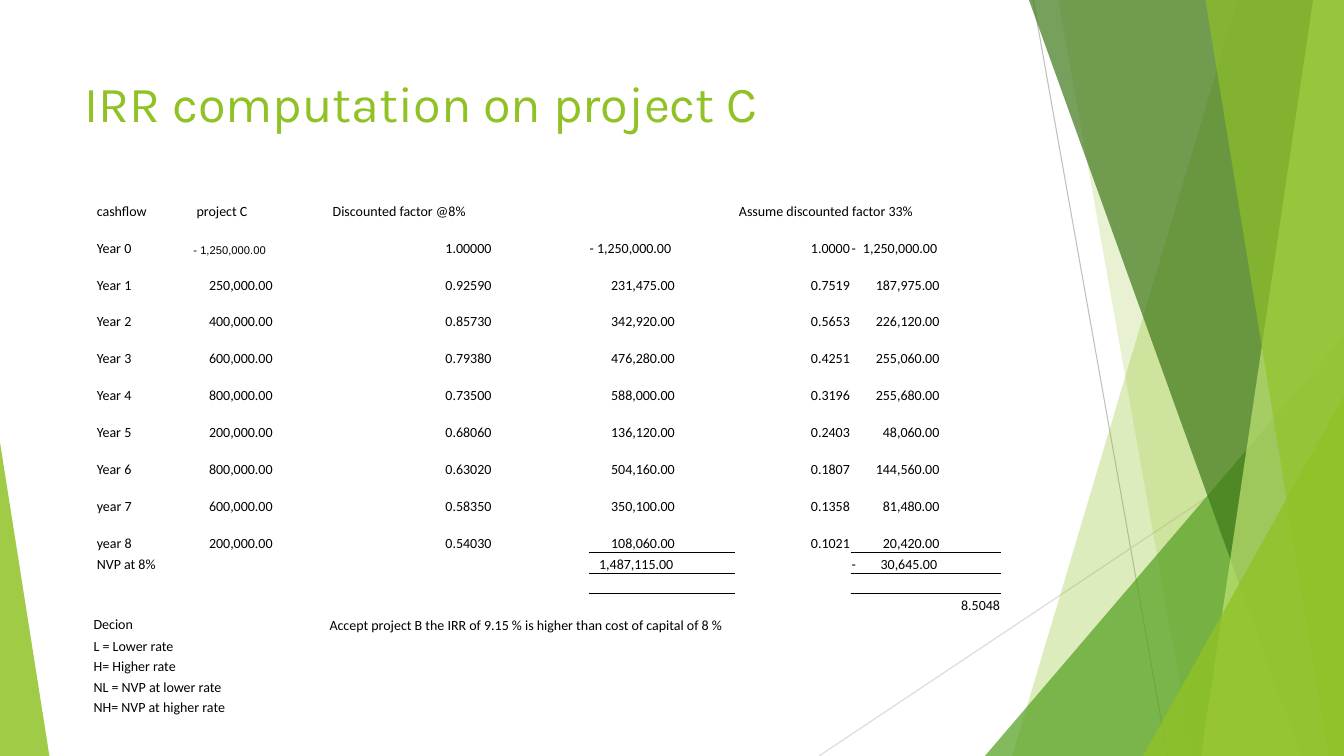
from dataclasses import dataclass

from lxml import etree
from pptx import Presentation
from pptx.dml.color import RGBColor
from pptx.enum.shapes import MSO_CONNECTOR, MSO_SHAPE
from pptx.enum.text import MSO_ANCHOR, PP_ALIGN
from pptx.oxml.ns import qn
from pptx.util import Pt

LEFT, RIGHT = PP_ALIGN.LEFT, PP_ALIGN.RIGHT
BOTTOM, MIDDLE = MSO_ANCHOR.BOTTOM, MSO_ANCHOR.MIDDLE
TRIANGLE, STRAIGHT = MSO_SHAPE.ISOSCELES_TRIANGLE, MSO_CONNECTOR.STRAIGHT
W, H = 960, 540
GREEN, BLACK = "90C226", "000000"
PLAIN_STYLE = "{2D5ABB26-0587-4C30-8999-92F81FD0307C}"
INSET, LABEL_INSET = 0.7, 3


@dataclass
class Blade:
    """Facet running from the top edge to the bottom and right edges."""
    top: float
    bottom: float
    color: str
    alpha: int


@dataclass
class Wedge:
    """Right triangle standing on the bottom edge."""
    left: float
    top: float
    width: float
    apex: float
    color: str
    alpha: int


@dataclass
class Entry:
    row: int
    col: int
    text: str
    left: float = INSET
    right: float = INSET
    align: PP_ALIGN = LEFT
    anchor: MSO_ANCHOR = BOTTOM
    size: float = 10
    font: str = "Calibri"
    tab: float = 0


FACETS = [
    Blade(884, 723, GREEN, 30),
    Blade(756, 852, GREEN, 20),
    Wedge(703.5, 240, 256.5, 1, "54A021", 72),
    Blade(735, 929.5, "3F7819", 70),
    Blade(938, 858, "C0E474", 70),
    Blade(861, 949, GREEN, 65),
    Wedge(816.5, 283, 143.5, 1, GREEN, 80),
    Wedge(0, 316, 35.3, 0, GREEN, 85),
]
RAYS = [((738, 0), (834, H), "BFBFBF"), ((W, 290), (585, H), "D9D9D9")]

COLS = [71.3, 97.2, 185.8, 104.4, 82.8, 107.3, 71.3, 71.3]
ROWS = [14.6] + [26.35] * 9 + [15.2] + [14.6] * 7
MERGES = [(0, 4, 6), (10, 0, 1), (12, 0, 2), (13, 2, 5)] + [(r, 0, 1) for r in range(14, 18)]
RIGHT_INSETS = [40, 69.5, 43, INSET, 44]  # number columns 1 to 5
YEARS = [
    ("Year 1", "250,000.00", "0.92590", "231,475.00", "0.7519", "187,975.00"),
    ("Year 2", "400,000.00", "0.85730", "342,920.00", "0.5653", "226,120.00"),
    ("Year 3", "600,000.00", "0.79380", "476,280.00", "0.4251", "255,060.00"),
    ("Year 4", "800,000.00", "0.73500", "588,000.00", "0.3196", "255,680.00"),
    ("Year 5", "200,000.00", "0.68060", "136,120.00", "0.2403", "48,060.00"),
    ("Year 6", "800,000.00", "0.63020", "504,160.00", "0.1807", "144,560.00"),
    ("year 7", "600,000.00", "0.58350", "350,100.00", "0.1358", "81,480.00"),
    ("year 8", "200,000.00", "0.54030", "108,060.00", "0.1021", "20,420.00"),
]
LABELS = [
    (0, 0, "cashflow"), (0, 1, "project C"), (0, 2, "Discounted factor @8%"),
    (0, 4, "Assume discounted factor 33%"), (1, 0, "Year 0"), (10, 0, "NVP at 8%"),
]
LEGEND = ["L = Lower rate", "H= Higher rate", "NL = NVP at lower rate", "NH= NVP at higher rate"]
# Row, side and width of the rules under the present-value columns
RULES = [(9, "B", 0.5), (10, "B", 1), (10, "T", 0.5), (11, "T", 1)]


def rgb(color: str) -> RGBColor:
    return RGBColor.from_string(color)


def paint(shape, color: str, alpha: int) -> None:
    shape.shadow.inherit = False
    shape.line.fill.background()
    shape.fill.solid()
    shape.fill.fore_color.rgb = rgb(color)
    clr = next(shape.fill._xPr.iter(qn("a:srgbClr")))
    etree.SubElement(clr, qn("a:alpha")).set("val", str(alpha * 1000))


def draw_blade(s, b: Blade) -> None:
    fb = s.shapes.build_freeform(Pt(b.top), 0)
    fb.add_line_segments([(Pt(x), Pt(y)) for x, y in ((W, 0), (W, H), (b.bottom, H))])
    paint(fb.convert_to_shape(), b.color, b.alpha)


def draw_wedge(s, w: Wedge) -> None:
    sp = s.shapes.add_shape(TRIANGLE, Pt(w.left), Pt(w.top), Pt(w.width), Pt(H - w.top))
    sp.adjustments[0] = w.apex
    paint(sp, w.color, w.alpha)


def draw_ray(s, start: tuple, end: tuple, color: str) -> None:
    c = s.shapes.add_connector(STRAIGHT, *[Pt(v) for v in start + end])
    c.line.color.rgb = rgb(color)
    c.line.width = Pt(0.75)
    etree.SubElement(c._element.spPr, qn("a:effectLst"))


def add_run(p, text: str, size: float, font: str, color: str) -> None:
    r = p.add_run()
    r.text = text
    r.font.size = Pt(size)
    r.font.name = font
    r.font.color.rgb = rgb(color)


def fill_cell(tbl, e: Entry) -> None:
    cell = tbl.cell(e.row, e.col)
    cell.margin_left, cell.margin_right = Pt(e.left), Pt(e.right)
    cell.vertical_anchor = e.anchor
    p = cell.text_frame.paragraphs[0]
    p.alignment = e.align
    if e.tab:
        tabs = etree.SubElement(p._p.get_or_add_pPr(), qn("a:tabLst"))
        etree.SubElement(tabs, qn("a:tab"), pos=str(Pt(e.tab)), algn="r")
    add_run(p, e.text, e.size, e.font, BLACK)


def draw_rule(cell, side: str, width: float) -> None:
    ln = etree.Element(qn("a:ln" + side), w=str(Pt(width)))
    fill = etree.SubElement(ln, qn("a:solidFill"))
    etree.SubElement(fill, qn("a:srgbClr"), val=BLACK)
    cell._tc.get_or_add_tcPr().insert(0, ln)


def table_entries() -> list[Entry]:
    entries = [Entry(r, c, text, left=LABEL_INSET) for r, c, text in LABELS]
    for row, (year, *numbers) in enumerate(YEARS, 2):
        entries.append(Entry(row, 0, year, left=LABEL_INSET))
        for col, (text, inset) in enumerate(zip(numbers, RIGHT_INSETS), 1):
            entries.append(Entry(row, col, text, right=inset, align=RIGHT))
    entries += [
        Entry(1, 1, "- 1,250,000.00", size=8, font="Arial"),
        Entry(1, 2, "1.00000", right=RIGHT_INSETS[1], align=RIGHT),
        Entry(1, 3, "- 1,250,000.00"),
        Entry(1, 4, "1.0000", align=RIGHT),
        Entry(1, 5, "-\t1,250,000.00", tab=61),
        Entry(10, 3, "1,487,115.00", right=44, align=RIGHT),
        Entry(10, 5, "-\t30,645.00", tab=61),
        Entry(12, 5, "8.5048", align=RIGHT),
        Entry(13, 0, "Decion", anchor=MIDDLE),
        Entry(13, 2, "Accept project B the IRR of 9.15 % is higher than cost of capital of 8 %"),
    ]
    return entries + [Entry(row, 0, text) for row, text in enumerate(LEGEND, 14)]


def draw_table(s) -> None:
    frame = s.shapes.add_table(len(ROWS), len(COLS), Pt(66.2), Pt(142.6), Pt(sum(COLS)), Pt(sum(ROWS)))
    tbl = frame.table
    tbl.first_row = tbl.horz_banding = False
    tbl._tbl.tblPr.find(qn("a:tableStyleId")).text = PLAIN_STYLE
    for col, width in zip(tbl.columns, COLS):
        col.width = Pt(width)
    for row, height in zip(tbl.rows, ROWS):
        row.height = Pt(height)
    for cell in tbl.iter_cells():
        cell.fill.background()
        cell.margin_left = cell.margin_right = cell.margin_top = Pt(INSET)
        cell.margin_bottom = 0
        # Keeps empty cells from stretching their rows
        etree.SubElement(cell.text_frame.paragraphs[0]._p, qn("a:endParaRPr"), sz="1000")
    for r, first, last in MERGES:
        tbl.cell(r, first).merge(tbl.cell(r, last))
    for e in table_entries():
        fill_cell(tbl, e)
    for r, side, width in RULES:
        for c in (3, 5):
            draw_rule(tbl.cell(r, c), side, width)


def main() -> None:
    prs = Presentation()
    prs.slide_width, prs.slide_height = Pt(W), Pt(H)
    s = prs.slides.add_slide(prs.slide_layouts[6])

    # Backdrop
    for ray in RAYS:
        draw_ray(s, *ray)
    for facet in FACETS:
        if isinstance(facet, Blade):
            draw_blade(s, facet)
        else:
            draw_wedge(s, facet)

    # Title
    tf = s.shapes.add_textbox(Pt(53.3), Pt(48), Pt(677), Pt(104)).text_frame
    tf.word_wrap = True
    add_run(tf.paragraphs[0], "IRR computation on project C", 36, "Karla", GREEN)

    # Cash flows
    draw_table(s)
    prs.save("out.pptx")


if __name__ == "__main__":
    main()
